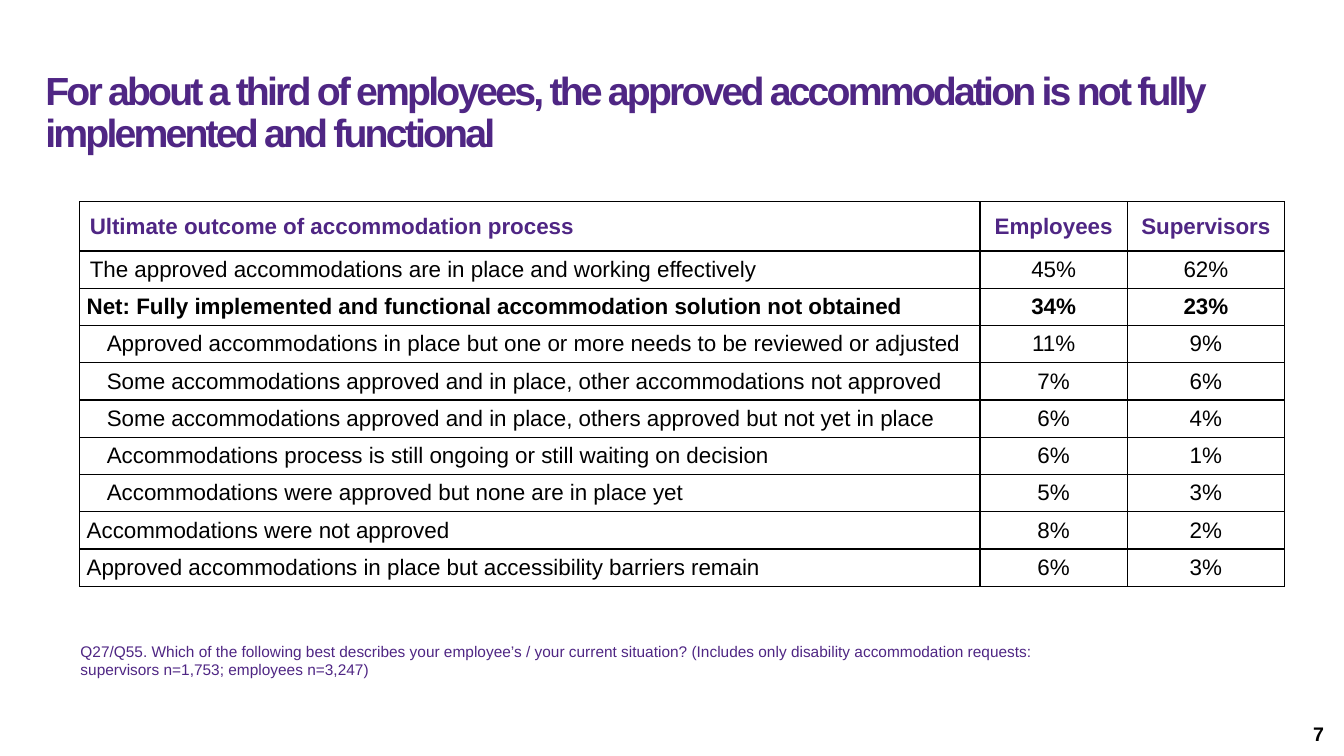
import pptx
import pptx.dml.color
import pptx.enum.text
import pptx.oxml
import pptx.oxml.ns
import pptx.util

Inches = pptx.util.Inches
Pt = pptx.util.Pt
ALIGN = pptx.enum.text.PP_ALIGN
ANCHOR = pptx.enum.text.MSO_ANCHOR
AUTO_SIZE = pptx.enum.text.MSO_AUTO_SIZE

PURPLE, BLACK, WHITE = "4F2684", "000000", "FFFFFF"
COLUMN_WIDTHS = (8.93, 1.46, 1.56)
HEADER_HEIGHT, ROW_HEIGHT = 0.49, 0.37
HEADINGS = ("Ultimate outcome of accommodation process", "Employees", "Supervisors")
IN_PLACE = ("The approved accommodations are in place and working effectively", "45%", "62%")
NET = ("Net: Fully implemented and functional accommodation solution not obtained", "34%", "23%")
NET_PARTS = (
    ("Approved accommodations in place but one or more needs to be reviewed or adjusted", "11%", "9%"),
    ("Some accommodations approved and in place, other accommodations not approved", "7%", "6%"),
    ("Some accommodations approved and in place, others approved but not yet in place", "6%", "4%"),
    ("Accommodations process is still ongoing or still waiting on decision", "6%", "1%"),
    ("Accommodations were approved but none are in place yet", "5%", "3%"),
)
OTHER_OUTCOMES = (
    ("Accommodations were not approved", "8%", "2%"),
    ("Approved accommodations in place but accessibility barriers remain", "6%", "3%"),
)


def color(hex_string):
    return pptx.dml.color.RGBColor.from_string(hex_string)


def write(paragraph, text, size=16, hex_color=BLACK, bold=False, align=ALIGN.LEFT,
          after=None, line_spacing=None, indent=None, tracking=None):
    paragraph.alignment = align
    if after is not None:
        paragraph.space_after = Pt(after)
    if line_spacing is not None:
        paragraph.line_spacing = line_spacing
    if indent is not None:
        properties = paragraph._p.get_or_add_pPr()
        properties.set("marL", str(Inches(indent)))
        properties.set("indent", "0")
    run = paragraph.add_run()
    run.text = text
    run.font.name = "Arial"
    run.font.size = Pt(size)
    run.font.bold = bold
    run.font.color.rgb = color(hex_color)
    if tracking is not None:
        run._r.get_or_add_rPr().set("spc", str(round(tracking * 100)))


def place_title(slide, left, top, width, height):
    title = slide.shapes.title
    title.left, title.top = Inches(left), Inches(top)
    title.width, title.height = Inches(width), Inches(height)
    frame = title.text_frame
    frame.word_wrap = True
    frame.auto_size = AUTO_SIZE.SHAPE_TO_FIT_TEXT
    frame.vertical_anchor = ANCHOR.TOP
    frame.margin_left = frame.margin_right = 0
    frame.margin_top = frame.margin_bottom = Inches(0.02)
    write(frame.paragraphs[0],
          "For about a third of employees, the approved accommodation is not fully "
          "implemented and functional",
          size=28, hex_color=PURPLE, bold=True, line_spacing=0.9, tracking=-2)


def draw_borders(cell):
    # Borders come before the fill in the cell properties
    properties = cell._tc.get_or_add_tcPr()
    for position, side in enumerate(("lnL", "lnR", "lnT", "lnB")):
        properties.insert(position, pptx.oxml.parse_xml(
            f'<a:{side} {pptx.oxml.ns.nsdecls("a")} w="{Pt(1)}"><a:solidFill>'
            f'<a:srgbClr val="{BLACK}"/></a:solidFill></a:{side}>'))


def place_outcomes(slide, left, top):
    # Each row: texts, text format, narrow cell margins
    rows = [(HEADINGS, {"hex_color": PURPLE, "bold": True}, False),
            (IN_PLACE, {}, False),
            (NET, {"bold": True, "after": 5.1}, True)]
    rows += [(part, {"after": 5.1, "indent": 0.2}, True) for part in NET_PARTS]
    rows += [(outcome, {"after": 5.1}, True) for outcome in OTHER_OUTCOMES]
    heights = [HEADER_HEIGHT] + [ROW_HEIGHT] * (len(rows) - 1)

    outcomes = slide.shapes.add_table(
        len(rows), len(COLUMN_WIDTHS), Inches(left), Inches(top),
        Inches(sum(COLUMN_WIDTHS)), Inches(sum(heights))).table
    outcomes.horz_banding = False
    for column, width in zip(outcomes.columns, COLUMN_WIDTHS):
        column.width = Inches(width)

    for row, height, (texts, row_format, narrow) in zip(outcomes.rows, heights, rows):
        row.height = Inches(height)
        for index, (cell, text) in enumerate(zip(row.cells, texts)):
            cell.vertical_anchor = ANCHOR.MIDDLE
            if narrow:
                cell.margin_left = cell.margin_right = Inches(0.07)
                cell.margin_top = cell.margin_bottom = 0
            cell.fill.solid()
            cell.fill.fore_color.rgb = color(WHITE)
            draw_borders(cell)
            cell_format = dict(row_format)
            if index > 0:
                cell_format.update(align=ALIGN.CENTER, indent=None)
            write(cell.text_frame.paragraphs[0], text, **cell_format)


def place_text(slide, left, top, width, height, text, anchor=ANCHOR.TOP, **text_format):
    frame = slide.shapes.add_textbox(
        Inches(left), Inches(top), Inches(width), Inches(height)).text_frame
    frame.word_wrap = True
    frame.vertical_anchor = anchor
    write(frame.paragraphs[0], text, **text_format)


def main():
    presentation = pptx.Presentation()
    presentation.slide_width = Inches(13.33)
    presentation.slide_height = Inches(7.5)
    slide = presentation.slides.add_slide(presentation.slide_layouts.get_by_name("Title Only"))

    place_title(slide, 0.45, 0.69, 11.86, 0.89)
    place_outcomes(slide, 0.79, 2)
    # Survey question and sample sizes
    place_text(slide, 0.7, 6.32, 10.43, 0.47,
               "Q27/Q55. Which of the following best describes your employee’s / your current "
               "situation? (Includes only disability accommodation requests: supervisors n=1,753; "
               "employees n=3,247)", size=11, hex_color=PURPLE)
    # Page number
    place_text(slide, 10.23, 7.08, 3, 0.4, "7", anchor=ANCHOR.MIDDLE,
               size=14, bold=True, align=ALIGN.RIGHT)
    presentation.save("out.pptx")


if __name__ == "__main__":
    main()
